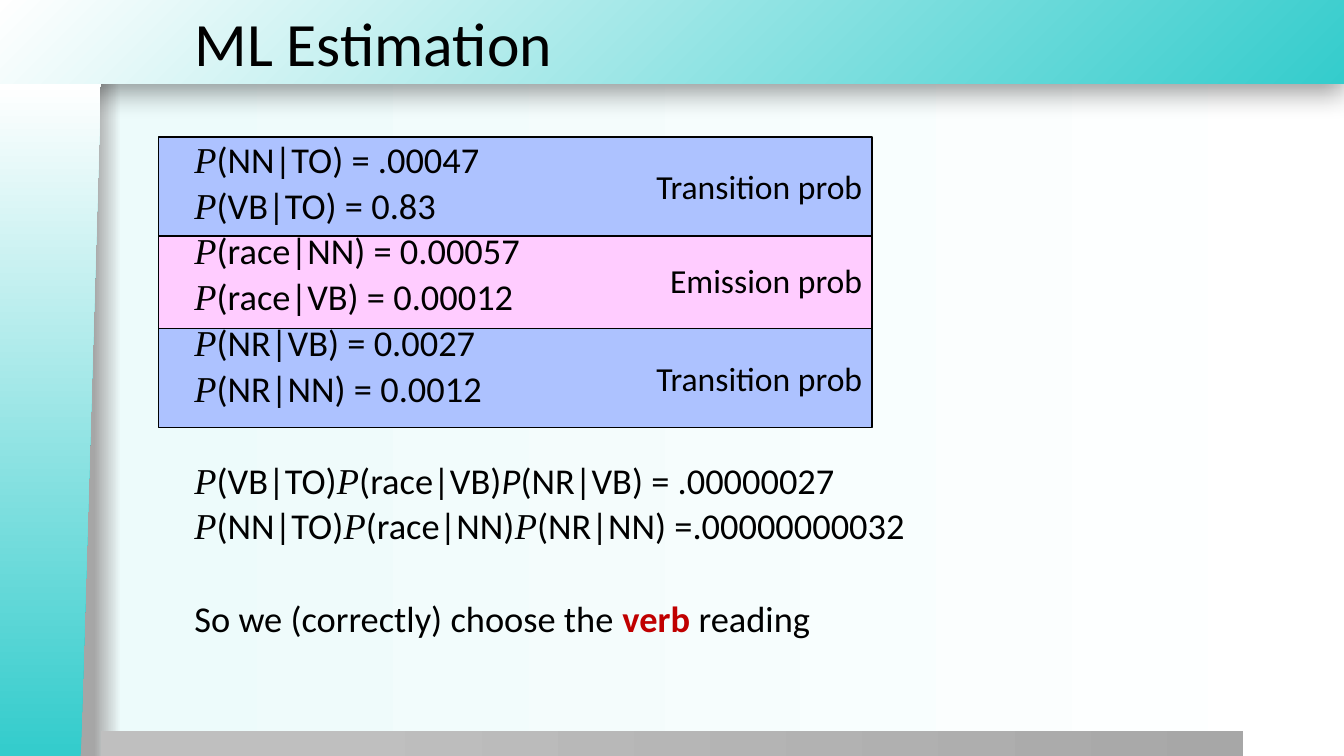
from dataclasses import dataclass

from lxml.etree import SubElement
from pptx import Presentation
from pptx.dml.color import RGBColor
from pptx.enum.shapes import MSO_SHAPE
from pptx.enum.text import MSO_ANCHOR, PP_ALIGN
from pptx.oxml.ns import qn
from pptx.util import Inches, Pt

COLORS = {
    "black": "000000", "red": "C00000", "white": "FFFFFF", "teal": "34CCCC",
    "mist": "EDFBFB", "edge": "A6A6A6", "silver": "BFBFBF", "gray": "A7A7A7",
    "blue": "ADC2FF", "pink": "FFCCFF",
}
SANS, SERIF = "Calibri", "Times New Roman"
LINE_GAP, BLOCK_GAP = 4.6, 37.8


@dataclass(frozen=True)
class Span:
    text: str
    font: str = SANS
    italic: bool = False
    bold: bool = False
    color: str = "black"


@dataclass(frozen=True)
class Line:
    spans: tuple[Span, ...]
    gap: float = LINE_GAP


@dataclass(frozen=True)
class Band:
    label: str
    top: float
    color: str


P = Span("P", SERIF, italic=True)
LINES = (
    Line((P, Span("(NN|TO) = .00047"))),
    Line((P, Span("(VB|TO) = 0.83"))),
    Line((P, Span("(race|NN) = 0.00057"))),
    Line((P, Span("(race|VB) = 0.00012"))),
    Line((P, Span("(NR|VB) = 0.0027"))),
    Line((P, Span("(NR|NN) = 0.0012"))),
    Line((P, Span("(VB|TO)"), P, Span("(race|VB)"),
          Span("P", italic=True), Span("(NR|VB) = .00000027")), BLOCK_GAP),
    Line((P, Span("(NN|TO)"), P, Span("(race|NN)"),
          P, Span("(NR|NN) =.00000000032"))),
    Line((Span("So we (correctly) choose the "),
          Span("verb", bold=True, color="red"), Span(" reading")), BLOCK_GAP),
)
BANDS = (
    Band("Emission prob", 2.29, "pink"),
    Band("Transition prob", 3.26, "blue"),
    Band("Transition prob", 1.36, "blue"),
)


def rgb(name: str) -> RGBColor:
    return RGBColor.from_string(COLORS[name])


def set_gradient(owner, fill, stops, corner: bool = False) -> None:
    """Fill with (percent, color) stops, left to right or from the lower right corner."""
    fill.gradient()
    fill.gradient_angle = 0
    gradient = owner.element.find(".//" + qn("a:gradFill"))
    stop_list = gradient.find(qn("a:gsLst"))
    for old_stop in list(stop_list):
        stop_list.remove(old_stop)
    for percent, color in stops:
        stop = SubElement(stop_list, qn("a:gs"), pos=str(percent * 1000))
        SubElement(stop, qn("a:srgbClr"), val=COLORS[color])
    if corner:
        gradient.remove(gradient.find(qn("a:lin")))
        circle = SubElement(gradient, qn("a:path"), {"path": "circle"})
        SubElement(circle, qn("a:fillToRect"), l="100000", t="100000")


def add_plain_shape(page, kind, left: float, top: float, width: float, height: float):
    shape = page.shapes.add_shape(
        kind, Inches(left), Inches(top), Inches(width), Inches(height))
    shape.shadow.inherit = False
    shape.line.fill.background()
    return shape


def add_shadow(shape) -> None:
    effects = shape.element.spPr.find(qn("a:effectLst"))
    shadow = SubElement(effects, qn("a:outerShdw"), blurRad=str(Pt(20)),
                        dist=str(Pt(6)), dir="5400000", algn="t", rotWithShape="0")
    color = SubElement(shadow, qn("a:srgbClr"), val=COLORS["black"])
    SubElement(color, qn("a:alpha"), val="40000")


def add_span(para, span: Span, size: float) -> None:
    run = para.add_run()
    run.text = span.text
    run.font.name = span.font
    run.font.size = Pt(size)
    run.font.italic = span.italic
    run.font.bold = span.bold
    run.font.color.rgb = rgb(span.color)


def add_text_frame(page, left: float, top: float, width: float, height: float):
    box = page.shapes.add_textbox(
        Inches(left), Inches(top), Inches(width), Inches(height))
    box.text_frame.word_wrap = True
    return box.text_frame


def add_band(page, band: Band) -> None:
    box = add_plain_shape(page, MSO_SHAPE.RECTANGLE, 1.57, band.top, 7.08, 0.98)
    box.fill.solid()
    box.fill.fore_color.rgb = rgb(band.color)
    box.line.color.rgb = rgb("black")
    box.line.width = Pt(1)
    box.text_frame.vertical_anchor = MSO_ANCHOR.MIDDLE
    para = box.text_frame.paragraphs[0]
    para.alignment = PP_ALIGN.RIGHT
    add_span(para, Span(band.label), 24)


def add_frame(page) -> None:
    set_gradient(page, page.background.fill, ((7, "edge"), (9, "mist"), (100, "white")))

    # Header bar
    header = add_plain_shape(page, MSO_SHAPE.RECTANGLE, 0, 0, 13.33, 0.83)
    set_gradient(header, header.fill, ((0, "teal"), (100, "white")), corner=True)
    add_shadow(header)

    # Footer bar
    footer = add_plain_shape(page, MSO_SHAPE.RECTANGLE, 1, 7.25, 11.33, 0.26)
    set_gradient(footer, footer.fill, ((20, "silver"), (100, "gray")))

    # Slanted side strip
    strip = add_plain_shape(
        page, MSO_SHAPE.FLOWCHART_MANUAL_INPUT, -2.84, 3.67, 6.68, 1)
    strip.rotation = 270
    strip.element.spPr.find(qn("a:xfrm")).set("flipV", "1")
    set_gradient(strip, strip.fill, ((1, "teal"), (100, "white")))


def main() -> None:
    deck = Presentation()
    deck.slide_width, deck.slide_height = Inches(13.33), Inches(7.5)
    page = deck.slides.add_slide(deck.slide_layouts[6])
    add_frame(page)

    # Labelled bands behind the estimates
    for band in BANDS:
        add_band(page, band)

    # Title
    title = add_text_frame(page, 1.83, 0, 11.5, 0.83)
    title.vertical_anchor = MSO_ANCHOR.MIDDLE
    add_span(title.paragraphs[0], Span("ML Estimation"), 44)

    # Estimates and conclusion
    body = add_text_frame(page, 1.83, 1.36, 10.5, 5.79)
    for index, line in enumerate(LINES):
        para = body.add_paragraph() if index else body.paragraphs[0]
        para.line_spacing = 0.9
        para.space_before = Pt(line.gap)
        for span in line.spans:
            add_span(para, span, 26)

    deck.save("out.pptx")


if __name__ == "__main__":
    main()
